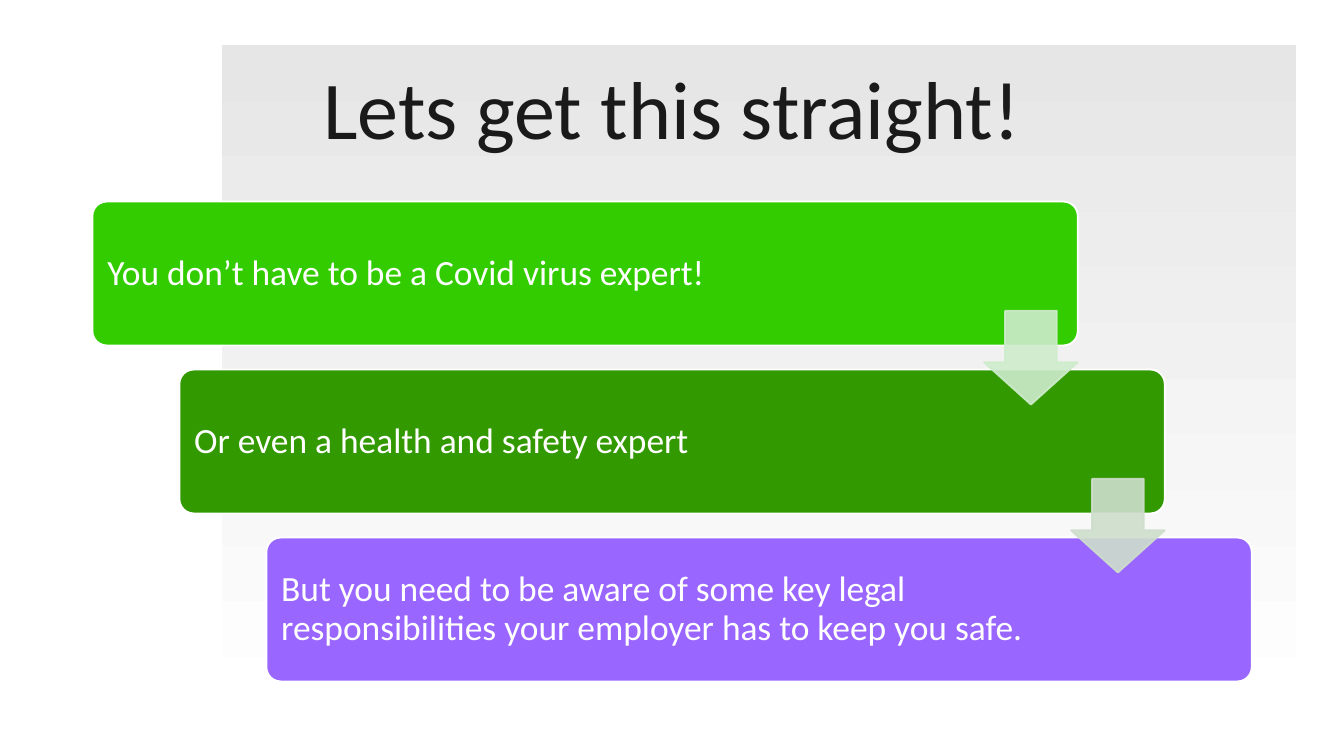
from lxml.etree import SubElement
from pptx import Presentation
from pptx.dml.color import RGBColor
from pptx.enum.shapes import MSO_SHAPE
from pptx.enum.text import MSO_ANCHOR, PP_ALIGN
from pptx.oxml.ns import qn
from pptx.util import Pt

WHITE = RGBColor(0xFF, 0xFF, 0xFF)
GREY = RGBColor(0xE6, 0xE6, 0xE6)
INK = RGBColor(0x1A, 0x1A, 0x1A)
GREEN = RGBColor(0x33, 0xCC, 0x00)
DARK_GREEN = RGBColor(0x33, 0x99, 0x00)
PURPLE = RGBColor(0x99, 0x66, 0xFF)
PALE_GREEN = RGBColor(0xCE, 0xEC, 0xCC)
PALE_SAGE = RGBColor(0xCE, 0xDE, 0xCC)


def add_shape(kind, x, y, w, h, color):
    sp = s.shapes.add_shape(kind, Pt(x), Pt(y), Pt(w), Pt(h))
    sp.shadow.inherit = False
    sp.fill.solid()
    sp.fill.fore_color.rgb = color
    sp.line.color.rgb = color
    sp.line.width = Pt(1)
    return sp


def add_text(x, y, w, h, text, size, color, inset):
    tf = s.shapes.add_textbox(Pt(x), Pt(y), Pt(w), Pt(h)).text_frame
    tf.word_wrap = True
    tf.vertical_anchor = MSO_ANCHOR.MIDDLE
    tf.margin_left = tf.margin_right = Pt(inset)
    tf.margin_top = tf.margin_bottom = Pt(inset)
    p = tf.paragraphs[0]
    p.text = text
    p.line_spacing = 0.9
    p.font.name = "Calibri"
    p.font.size = Pt(size)
    p.font.color.rgb = color
    return p


prs = Presentation()
prs.slide_width, prs.slide_height = Pt(720), Pt(405)
s = prs.slides.add_slide(prs.slide_layouts[6])

panel = add_shape(MSO_SHAPE.RECTANGLE, 119, 24.2, 575.3, 357.3, GREY)
panel.line.fill.background()
panel.fill.gradient()
panel.fill.gradient_angle = 270
for stop, color in zip(panel.fill.gradient_stops, (GREY, WHITE)):
    stop.color.rgb = color

p = add_text(49.5, 21.6, 621, 78.3, "Lets get this straight!", 44, INK, 3.6)
p.alignment = PP_ALIGN.CENTER

LEFT, TOP, STEP_X, STEP_Y = 49.5, 108, 46.6, 90
steps = [
    ("You don’t have to be a Covid virus expert!", GREEN, 445),
    ("Or even a health and safety expert", DARK_GREEN, 427),
    ("But you need to be aware of some key legal responsibilities "
     "your employer has to keep you safe.", PURPLE, 427),
]
for i, (text, color, width) in enumerate(steps):
    x, y = LEFT + i * STEP_X, TOP + i * STEP_Y
    sp = add_shape(MSO_SHAPE.ROUNDED_RECTANGLE, x, y, 527.9, 77.1, color)
    sp.adjustments[0] = 0.1
    sp.line.color.rgb = WHITE
    add_text(x + 2.3, y + 2.3, width, 72.6, text, 19, WHITE, 5.7)

for i, color in enumerate((PALE_GREEN, PALE_SAGE)):
    sp = add_shape(MSO_SHAPE.DOWN_ARROW, LEFT + 477.7 + i * STEP_X,
                   TOP + 58.5 + i * STEP_Y, 50.2, 50.2, color)
    sp.adjustments[0], sp.adjustments[1] = 0.55, 0.45
    for clr in sp._element.spPr.iter(qn("a:srgbClr")):
        SubElement(clr, qn("a:alpha"), val="90000")

prs.save("out.pptx")
